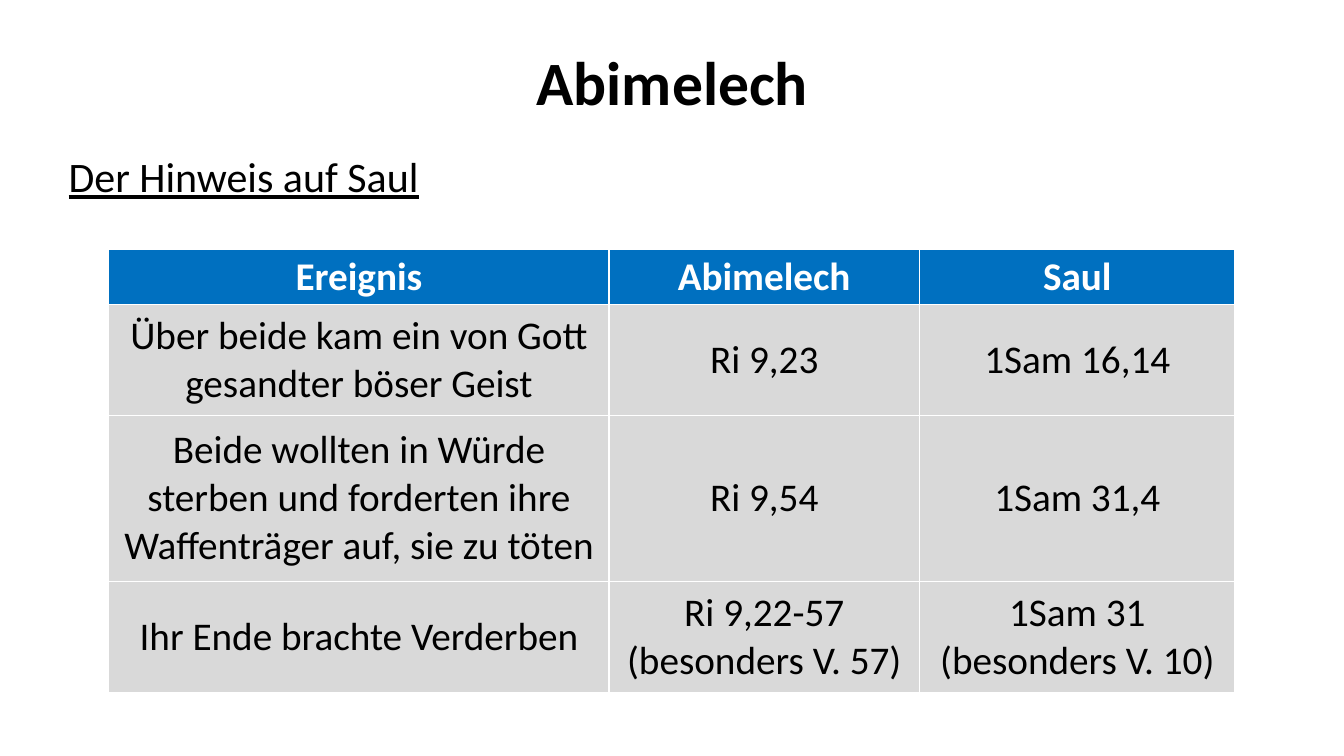
"""Build a slide comparing Abimelech and Saul in a table."""
from lxml import etree
from pptx import Presentation
from pptx import util as u
from pptx.dml.color import RGBColor
from pptx.enum import text
from pptx.oxml.ns import qn

TITLE = "Abimelech"
SUBTITLE = "Der Hinweis auf Saul"
ROWS = [
    ("Ereignis", "Abimelech", "Saul"),
    ("Über beide kam ein von Gott gesandter böser Geist", "Ri 9,23", "1Sam 16,14"),
    ("Beide wollten in Würde sterben und forderten ihre Waffenträger auf, sie zu töten",
     "Ri 9,54", "1Sam 31,4"),
    ("Ihr Ende brachte Verderben", "Ri 9,22-57\n(besonders V. 57)",
     "1Sam 31\n(besonders V. 10)"),
]
COLORS = {"text": "000000", "head_text": "FFFFFF", "head": "0070C0", "body": "D9D9D9"}
FONT = "Calibri"
SLIDE = (13.33, 7.5)
TITLE_BOX = (0.92, 0.4, 11.5, 0.89)
SUBTITLE_BOX = (0.58, 1.5, 5.14, 0.56)
TABLE_AT = (1.08, 2.47)
COLUMNS = (4.96, 3.08, 3.13)
LINE_HEIGHT = 0.55
ROW_LINES = (1, 2, 3, 2)


def place(sp, box):
    sp.left, sp.top, sp.width, sp.height = map(u.Inches, box)


def add_run(p, words, size, color="text", bold=False, underline=False):
    r = p.add_run()
    r.text = words
    f = r.font
    f.name, f.size, f.bold, f.underline = FONT, u.Pt(size), bold, underline
    f.color.rgb = RGBColor.from_string(COLORS[color])


def fill_cell(cell, content, is_head):
    cell.fill.solid()
    cell.fill.fore_color.rgb = RGBColor.from_string(COLORS["head" if is_head else "body"])
    cell.vertical_anchor = text.MSO_ANCHOR.MIDDLE
    cell.margin_left = cell.margin_right = u.Inches(0.14)
    cell.margin_top = cell.margin_bottom = 0
    tf = cell.text_frame
    for i, line in enumerate(content.split("\n")):
        p = tf.add_paragraph() if i else tf.paragraphs[0]
        p.alignment = text.PP_ALIGN.CENTER
        add_run(p, line, 28, "head_text" if is_head else "text", bold=is_head)


def add_headings(s):
    title, body = s.shapes.title, s.placeholders[1]
    place(title, TITLE_BOX)
    place(body, SUBTITLE_BOX)
    for sp in (title, body):
        sp.text_frame.auto_size = text.MSO_AUTO_SIZE.NONE
        sp.text_frame.paragraphs[0].line_spacing = 0.9
    title.text_frame.vertical_anchor = text.MSO_ANCHOR.MIDDLE
    p = title.text_frame.paragraphs[0]
    p.alignment = text.PP_ALIGN.CENTER
    add_run(p, TITLE, 44, bold=True)
    p = body.text_frame.paragraphs[0]
    p.space_before = u.Pt(10)
    pPr = p._p.get_or_add_pPr()
    pPr.set("marL", "0")
    pPr.set("indent", "0")
    etree.SubElement(pPr, qn("a:buNone"))
    add_run(p, SUBTITLE, 30, underline=True)


def add_comparison(s):
    size = (sum(COLUMNS), LINE_HEIGHT * sum(ROW_LINES))
    frame = s.shapes.add_table(len(ROWS), len(COLUMNS), *map(u.Inches, TABLE_AT + size))
    table = frame.table
    for column, width in zip(table.columns, COLUMNS):
        column.width = u.Inches(width)
    for i, (row, lines) in enumerate(zip(table.rows, ROW_LINES)):
        row.height = u.Inches(LINE_HEIGHT * lines)
        for cell, content in zip(row.cells, ROWS[i]):
            fill_cell(cell, content, i == 0)


def main():
    prs = Presentation()
    prs.slide_width, prs.slide_height = map(u.Inches, SLIDE)
    s = prs.slides.add_slide(prs.slide_layouts[1])
    add_headings(s)
    add_comparison(s)
    prs.save("out.pptx")


if __name__ == "__main__":
    main()
